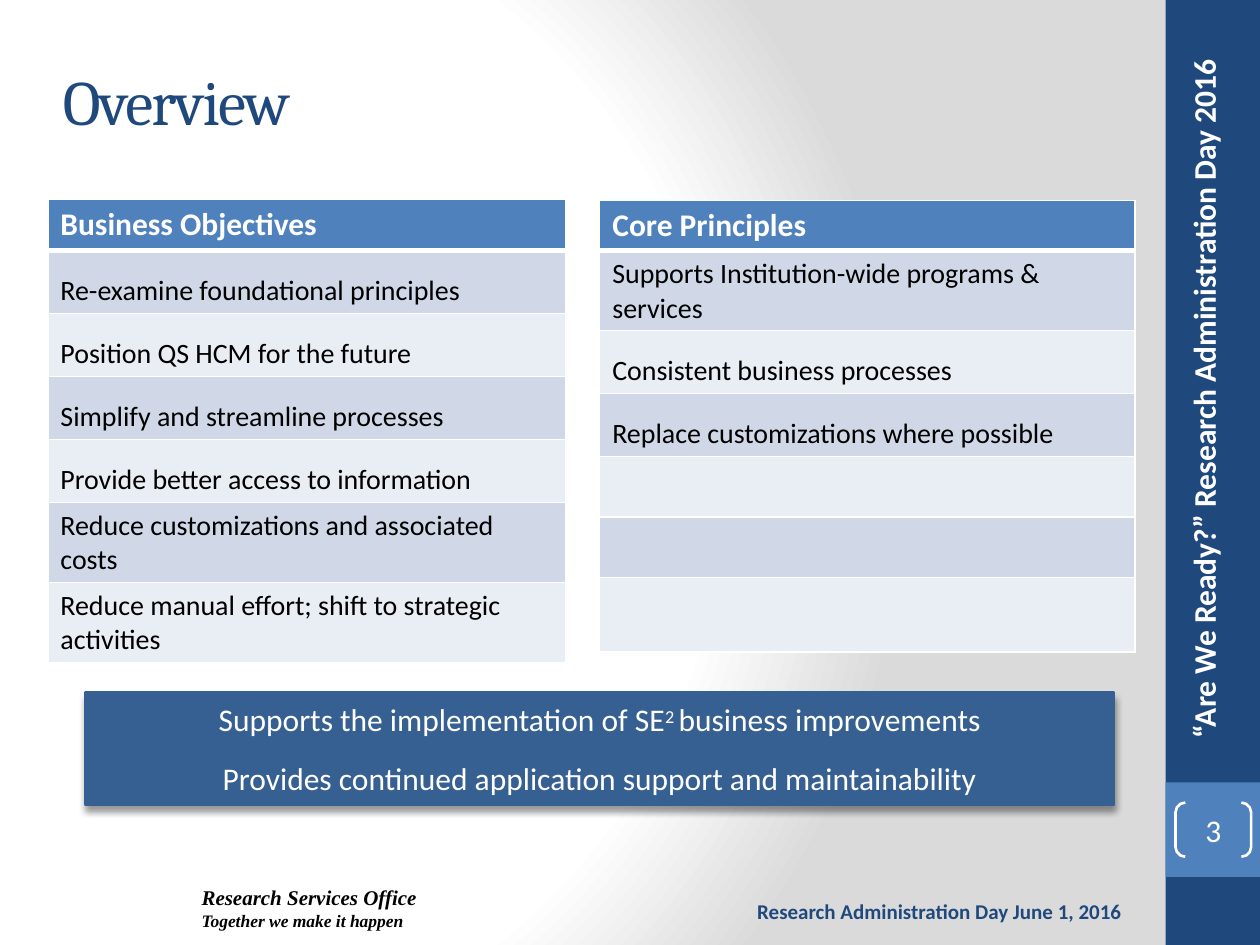
"""Build the Overview slide with objectives, principles and a closing banner."""
from lxml import etree
from pptx import Presentation
from pptx.dml.color import RGBColor
from pptx.enum.shapes import MSO_SHAPE
from pptx.enum.text import MSO_ANCHOR, PP_ALIGN
from pptx.oxml import parse_xml
from pptx.oxml.ns import nsdecls, qn
from pptx.util import Inches, Pt

RECTANGLE, BRACKETS = MSO_SHAPE.RECTANGLE, MSO_SHAPE.DOUBLE_BRACKET
LEFT, CENTER, RIGHT = PP_ALIGN.LEFT, PP_ALIGN.CENTER, PP_ALIGN.RIGHT
MIDDLE = MSO_ANCHOR.MIDDLE
NAVY = RGBColor(0x1F, 0x49, 0x7D)
BLUE = RGBColor(0x4F, 0x81, 0xBD)
STEEL = RGBColor(0x37, 0x60, 0x92)
WHITE = RGBColor(0xFF, 0xFF, 0xFF)
BLACK = RGBColor(0, 0, 0)
BANDS = [RGBColor(0xE9, 0xED, 0xF4), RGBColor(0xD0, 0xD8, 0xE8)]

prs = Presentation()
prs.slide_width, prs.slide_height = Inches(10), Inches(7.5)
COL, ROW = prs.slide_width / 100, prs.slide_height / 75
slide = prs.slides.add_slide(prs.slide_layouts[6])
shapes = slide.shapes


def area(left, top, width, height):
    """Turn grid columns and rows into slide lengths."""
    return int(left * COL), int(top * ROW), int(width * COL), int(height * ROW)


def style(paragraph, size, color, name="Calibri", bold=False, italic=False, align=LEFT):
    """Set the alignment and font of a paragraph."""
    paragraph.alignment = align
    font = paragraph.font
    font.size, font.name, font.bold, font.italic = Pt(size), name, bold, italic
    font.color.rgb = color


slide.background.fill.solid()
backdrop = slide.element.find(".//" + qn("p:bgPr"))
backdrop.replace(backdrop[0], parse_xml(
    f'<a:gradFill {nsdecls("a")} rotWithShape="1"><a:gsLst>'
    '<a:gs pos="0"><a:srgbClr val="FFFFFF"/></a:gs>'
    '<a:gs pos="75000"><a:srgbClr val="FFFFFF"/></a:gs>'
    '<a:gs pos="100000"><a:srgbClr val="DADADA"/></a:gs></a:gsLst>'
    '<a:path path="circle"><a:fillToRect l="20000" t="50000" r="100000" b="50000"/>'
    '</a:path></a:gradFill>'))

for top, height, color in [(0, 75, NAVY), (62.1, 7.5, BLUE)]:
    band = shapes.add_shape(RECTANGLE, *area(92.5, top, 7.5, height))
    band.shadow.inherit = False
    band.fill.solid()
    band.fill.fore_color.rgb = color
    band.line.fill.background()

motto = shapes.add_textbox(*area(93.5, 2.5, 5, 58.3)).text_frame
motto.word_wrap = True
motto._txBody.bodyPr.set("vert", "vert270")
motto.text = "“Are We Ready?” Research Administration Day 2016"
style(motto.paragraphs[0], 18, WHITE, bold=True, align=CENTER)

office = shapes.add_textbox(*area(16, 70.2, 19.4, 4)).text_frame
office.word_wrap = True
office.margin_left = office.margin_top = office.margin_right = office.margin_bottom = 0
office.text = "Research Services Office\nTogether we make it happen"
for line, size in zip(office.paragraphs, (12, 10)):
    style(line, size, BLACK, "Times New Roman", bold=True, italic=True)

event = shapes.add_textbox(*area(56.7, 70.8, 33.3, 3)).text_frame
event.word_wrap = True
event.text = "Research Administration Day June 1, 2016"
style(event.paragraphs[0], 12, NAVY, bold=True, align=RIGHT)

title = shapes.add_textbox(*area(4, 2.5, 86, 11)).text_frame
title.word_wrap = True
title.vertical_anchor = MIDDLE
title.text = "Overview"
style(title.paragraphs[0], 36, NAVY, "Cambria")
title.paragraphs[0].runs[0]._r.get_or_add_rPr().set("spc", "-100")

page = shapes.add_shape(BRACKETS, *area(93.3, 63.7, 6, 4.3))
page.shadow.inherit = False
page.adjustments[0] = 0.18
page.fill.background()
page.line.color.rgb, page.line.width = WHITE, Pt(1.5)
number = page.text_frame
number.margin_left = number.margin_top = number.margin_right = number.margin_bottom = 0
number.vertical_anchor = MIDDLE
number.text = "3"
style(number.paragraphs[0], 18, WHITE, align=CENTER)

objectives = [
    "Business Objectives",
    "Re-examine foundational principles",
    "Position QS HCM for the future",
    "Simplify and streamline processes",
    "Provide better access to information",
    "Reduce customizations and associated costs",
    "Reduce manual effort; shift to strategic activities",
]
principles = [
    "Core Principles",
    "Supports Institution-wide programs & services",
    "Consistent business processes",
    "Replace customizations where possible",
    "", "", "",
]
lists = [
    (3.8, 15.8, 41.1, [4.1] * 7, objectives, (1, 2, 3, 4)),
    (47.6, 15.9, 42.5, [3.8, 6, 4.4, 4.4, 4.8, 4.8, 5.9], principles, (2, 3)),
]
for left, top, width, heights, entries, spaced in lists:
    table = shapes.add_table(len(entries), 1, *area(left, top, width, sum(heights))).table
    for index, (entry, height) in enumerate(zip(entries, heights)):
        table.rows[index].height = int(height * ROW)
        cell = table.cell(index, 0)
        properties = cell._tc.get_or_add_tcPr()
        for side in "LRTB":
            heavy = (index, side) in [(0, "B"), (1, "T")]
            edge = etree.SubElement(properties, qn("a:ln" + side), w=str(Pt(3 if heavy else 1)))
            paint = etree.SubElement(edge, qn("a:solidFill"))
            etree.SubElement(paint, qn("a:srgbClr"), val=str(WHITE))
        cell.fill.solid()
        cell.fill.fore_color.rgb = BANDS[index % 2] if index else BLUE
        if entry:
            cell.text = entry
            paragraph = cell.text_frame.paragraphs[0]
            if index in spaced:
                paragraph.line_spacing = 1.5
            style(paragraph, 16 if index else 18, BLACK if index else WHITE, bold=index == 0)

banner = shapes.add_shape(RECTANGLE, *area(6.8, 55, 81.6, 8.8))
banner.fill.solid()
banner.fill.fore_color.rgb = STEEL
banner.line.color.rgb, banner.line.width = STEEL, Pt(2)
banner._element.spPr.append(parse_xml(
    f'<a:effectLst {nsdecls("a")}><a:outerShdw blurRad="{Pt(4)}" dist="{Pt(3)}" dir="5400000" '
    'rotWithShape="0"><a:srgbClr val="000000"><a:alpha val="40000"/></a:srgbClr>'
    '</a:outerShdw></a:effectLst>'))
benefits = banner.text_frame
benefits.word_wrap = True
benefits.margin_top = benefits.margin_bottom = 0
benefits.vertical_anchor = MIDDLE
improvement, support = benefits.paragraphs[0], benefits.add_paragraph()
for words in ("Supports the implementation of SE", "2 ", "business improvements"):
    improvement.add_run().text = words
improvement.runs[1]._r.get_or_add_rPr().set("baseline", "25000")
support.text = "Provides continued application support and maintainability"
support.space_before = Pt(12)
for line in benefits.paragraphs:
    style(line, 18, WHITE, align=CENTER)

prs.save("out.pptx")
